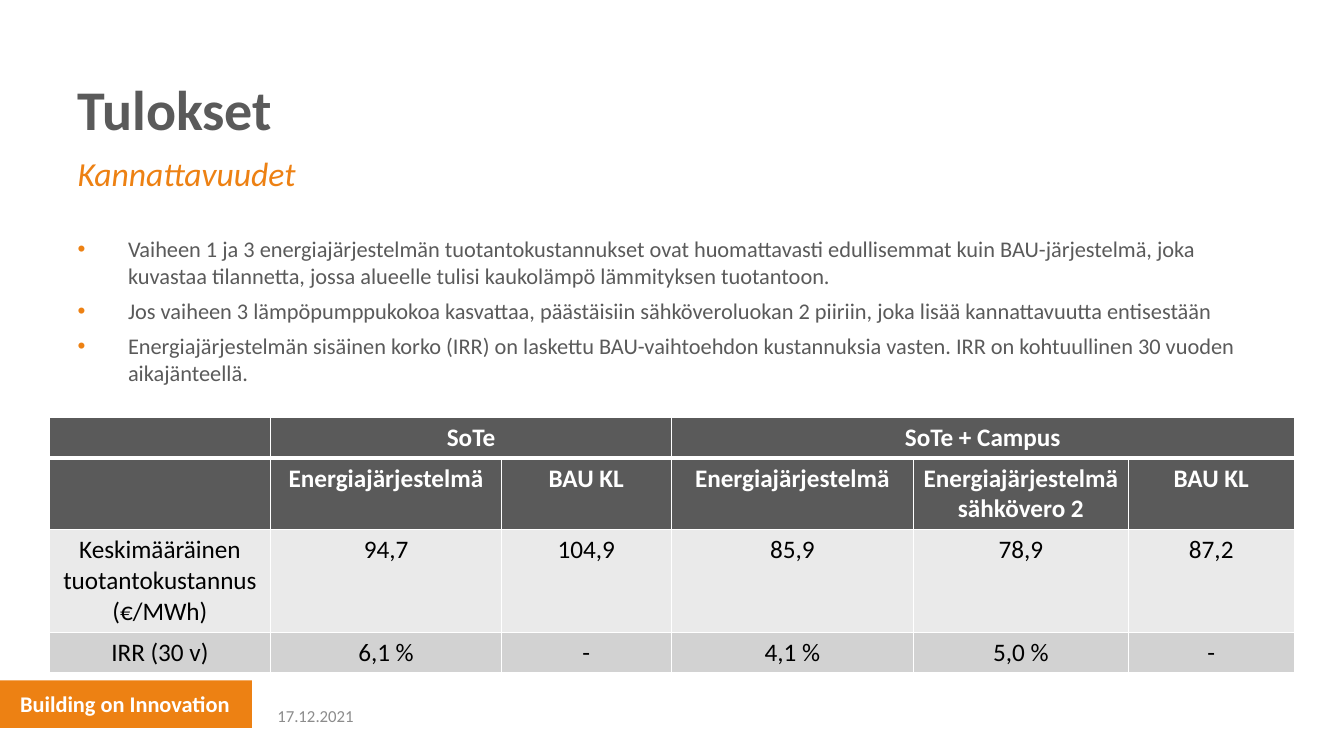
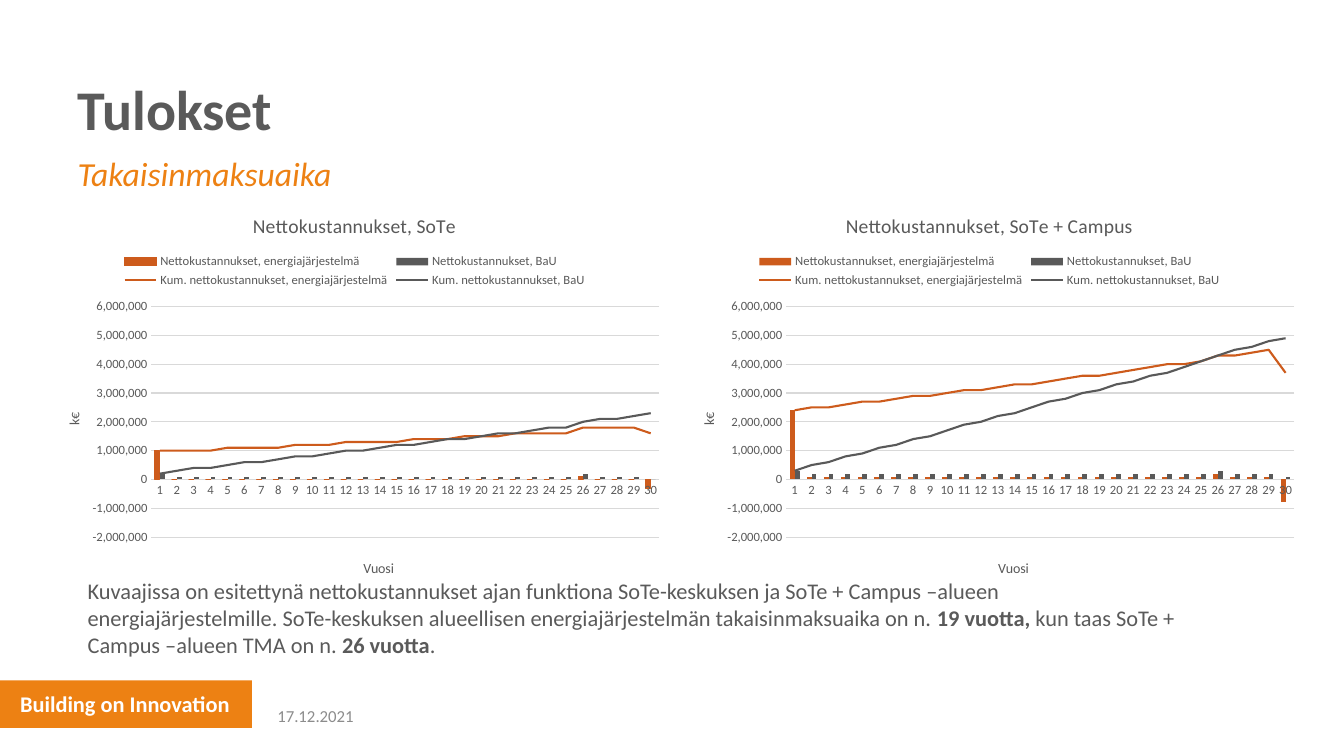
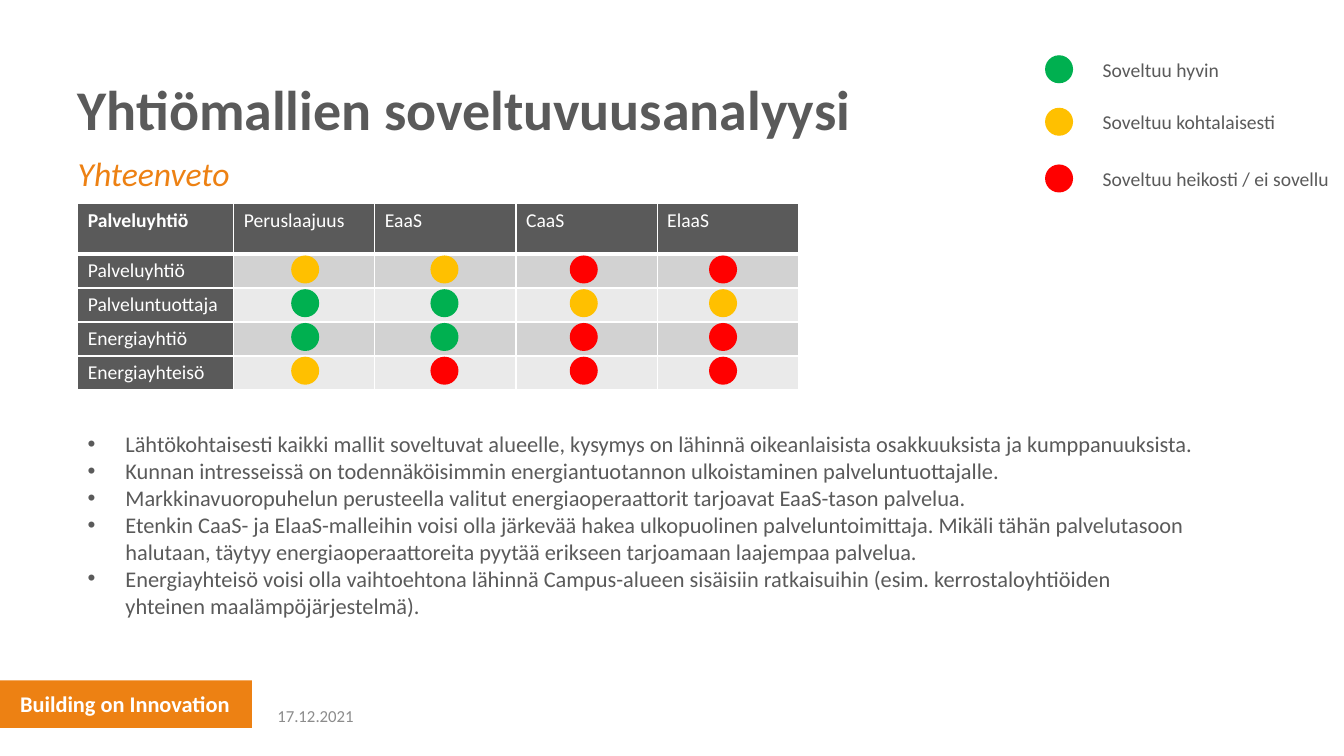
import pptx
import pptx.chart.data
import pptx.dml.color
import pptx.enum.chart
import pptx.enum.shapes
import pptx.enum.text
import pptx.oxml
import pptx.oxml.ns
import pptx.util
from lxml import etree

Pt = pptx.util.Pt
qn = pptx.oxml.ns.qn
RGB = pptx.dml.color.RGBColor
ALIGN = pptx.enum.text.PP_ALIGN
ANCHOR = pptx.enum.text.MSO_ANCHOR
SHAPE = pptx.enum.shapes.MSO_SHAPE
CHART = pptx.enum.chart

# Colours and text styles
ORANGE = RGB(0xED, 0x81, 0x13)
GRAY = RGB(0x5A, 0x5A, 0x5A)
MUTED = RGB(0x8C, 0x8C, 0x8C)
WHITE = RGB(0xFF, 0xFF, 0xFF)
BLACK = RGB(0, 0, 0)
LIGHT = RGB(0xEA, 0xEA, 0xEA)
DARK = RGB(0xD2, 0xD2, 0xD2)
GOOD = RGB(0, 0xB0, 0x50)
FAIR = RGB(0xFF, 0xC0, 0)
POOR = RGB(0xFF, 0, 0)
RUST = RGB(0xCD, 0x5B, 0x1C)
SLATE = RGB(0x59, 0x59, 0x59)
GRID = RGB(0xD9, 0xD9, 0xD9)

FONT = "Calibri"
HEAD = {"size": Pt(40), "bold": True, "color": GRAY}
SUB = {"size": Pt(24), "italic": True, "color": ORANGE}
BODY = {"size": Pt(16), "color": GRAY}
KEY = {"size": Pt(14), "color": GRAY}
BAND = {"size": Pt(16), "bold": True, "color": WHITE}
DATE = {"size": Pt(12), "color": MUTED}
TICK = {"size": Pt(9), "color": SLATE}
NAME = {"size": Pt(10), "bold": False, "color": SLATE}
TOP = {"size": Pt(14), "bold": False, "color": SLATE}

# Slide 1 content
POINTS = [
    "Vaiheen 1 ja 3 energiajärjestelmän tuotantokustannukset ovat huomattavasti edullisemmat kuin BAU-järjestelmä, joka kuvastaa tilannetta, jossa alueelle tulisi kaukolämpö lämmityksen tuotantoon.",
    "Jos vaiheen 3 lämpöpumppukokoa kasvattaa, päästäisiin sähköveroluokan 2 piiriin, joka lisää kannattavuutta entisestään",
    "Energiajärjestelmän sisäinen korko (IRR) on laskettu BAU-vaihtoehdon kustannuksia vasten. IRR on kohtuullinen 30 vuoden aikajänteellä.",
]
COSTS = [
    ["", "SoTe", "", "SoTe + Campus", "", ""],
    ["", "Energiajärjestelmä", "BAU KL", "Energiajärjestelmä",
     "Energiajärjestelmäsähkövero 2", "BAU KL"],
    ["Keskimääräinen tuotantokustannus\n(€/MWh)", "94,7", "104,9", "85,9", "78,9", "87,2"],
    ["IRR (30 v)", "6,1 %", "-", "4,1 %", "5,0 %", "-"],
]

# Slide 2 content, values in units of 100 000
UNIT = 100000
SERIES = ["Nettokustannukset, energiajärjestelmä", "Nettokustannukset, BaU",
          "Kum. nettokustannukset, energiajärjestelmä", "Kum. nettokustannukset, BaU"]
CHARTS = [
    ("Nettokustannukset, SoTe", True, [
        [10] + [0] * 24 + [1] + [0] * 3 + [-3],
        [2] + [1] * 24 + [2] + [1] * 3 + [0],
        [10, 10, 10, 10, 11, 11, 11, 11, 12, 12, 12, 13, 13, 13, 13,
         14, 14, 14, 15, 15, 15, 16, 16, 16, 16, 18, 18, 18, 18, 16],
        [2, 3, 4, 4, 5, 6, 6, 7, 8, 8, 9, 10, 10, 11, 12,
         12, 13, 14, 14, 15, 16, 16, 17, 18, 18, 20, 21, 21, 22, 23]]),
    ("Nettokustannukset, SoTe + Campus", False, [
        [24] + [1] * 24 + [2] + [1] * 3 + [-8],
        [3] + [2] * 24 + [3] + [2] * 3 + [1],
        [24, 25, 25, 26, 27, 27, 28, 29, 29, 30, 31, 31, 32, 33, 33,
         34, 35, 36, 36, 37, 38, 39, 40, 40, 41, 43, 43, 44, 45, 37],
        [3, 5, 6, 8, 9, 11, 12, 14, 15, 17, 19, 20, 22, 23, 25,
         27, 28, 30, 31, 33, 34, 36, 37, 39, 41, 43, 45, 46, 48, 49]]),
]
PAYBACK = [
    ("Kuvaajissa on esitettynä nettokustannukset ajan funktiona SoTe-keskuksen ja SoTe + Campus –alueen energiajärjestelmille. SoTe-keskuksen alueellisen energiajärjestelmän takaisinmaksuaika on n. ", False),
    ("19 vuotta, ", True),
    ("kun taas SoTe + Campus –alueen TMA on n. ", False),
    ("26 vuotta", True),
    (".", False),
]

# Slide 3 content
MODELS = [
    ["Palveluyhtiö", "Peruslaajuus", "EaaS", "CaaS", "ElaaS"],
    ["Palveluyhtiö", "", "", "", ""],
    ["Palveluntuottaja", "", "", "", ""],
    ["Energiayhtiö", "", "", "", ""],
    ["Energiayhteisö", "", "", "", ""],
]
RATINGS = [
    [FAIR, FAIR, POOR, POOR],
    [GOOD, GOOD, FAIR, FAIR],
    [GOOD, GOOD, POOR, POOR],
    [FAIR, POOR, POOR, POOR],
]
KEYS = [(GOOD, "Soveltuu hyvin", 37.5), (FAIR, "Soveltuu kohtalaisesti", 75),
        (POOR, "Soveltuu heikosti / ei sovellu", 115.5)]
NOTES = [
    "Lähtökohtaisesti kaikki mallit soveltuvat alueelle, kysymys on lähinnä oikeanlaisista osakkuuksista ja kumppanuuksista.",
    "Kunnan intresseissä on todennäköisimmin energiantuotannon ulkoistaminen palveluntuottajalle.",
    "Markkinavuoropuhelun perusteella valitut energiaoperaattorit tarjoavat EaaS-tason palvelua.",
    "Etenkin CaaS- ja ElaaS-malleihin voisi olla järkevää hakea ulkopuolinen palveluntoimittaja. Mikäli tähän palvelutasoon halutaan, täytyy energiaoperaattoreita pyytää erikseen tarjoamaan laajempaa palvelua.",
    "Energiayhteisö voisi olla vaihtoehtona lähinnä Campus-alueen sisäisiin ratkaisuihin (esim. kerrostaloyhtiöiden yhteinen maalämpöjärjestelmä).",
]


# Text
def style(font, fmt):
    font.name = FONT
    for key, val in fmt.items():
        if key == "color":
            font.color.rgb = val
        else:
            setattr(font, key, val)


def bullet(para, indent, color):
    props = para._p.get_or_add_pPr()
    props.set("marL", str(Pt(indent)))
    props.set("indent", str(-Pt(indent)))
    tint = etree.SubElement(props, qn("a:buClr"))
    etree.SubElement(tint, qn("a:srgbClr"), val=str(color))
    etree.SubElement(props, qn("a:buFont"), typeface="Arial")
    etree.SubElement(props, qn("a:buChar"), char="•")


def write(frame, paras, fmt, align=None, indent=0, mark=GRAY, gap=0):
    for num, runs in enumerate(paras):
        para = frame.add_paragraph() if num else frame.paragraphs[0]
        if align is not None:
            para.alignment = align
        if num and gap:
            para.space_before = Pt(gap)
        if indent:
            bullet(para, indent, mark)
        for text, bold in [(runs, None)] if isinstance(runs, str) else runs:
            run = para.add_run()
            run.text = text
            style(run.font, fmt if bold is None else {**fmt, "bold": bold})


def setup(frame, inset, anchor):
    vals = {"word_wrap": True, "auto_size": pptx.enum.text.MSO_AUTO_SIZE.NONE,
            "vertical_anchor": anchor}
    if not inset:
        sides = ("left", "top", "right", "bottom")
        vals.update({"margin_" + side: 0 for side in sides})
    for key, val in vals.items():
        setattr(frame, key, val)


def label(slide, box, paras, fmt, inset=True, anchor=ANCHOR.TOP, **opts):
    shape = slide.shapes.add_textbox(*map(Pt, box))
    setup(shape.text_frame, inset, anchor)
    write(shape.text_frame, paras, fmt, **opts)
    return shape


def solid(slide, kind, box, color):
    shape = slide.shapes.add_shape(kind, *map(Pt, box))
    shape.shadow.inherit = False
    shape.fill.solid()
    shape.fill.fore_color.rgb = color
    shape.line.fill.background()
    return shape


# Shared slide parts
def brand(slide):
    band = solid(slide, SHAPE.RECTANGLE, (0, 486, 180, 34), ORANGE)
    motto = label(slide, (14.4, 493, 163, 26), ["Building on Innovation"], BAND, inset=False)
    for shape in (band, motto):
        slide.slide_layout.shapes._spTree.append(shape._element)


def page(deck, title, sub):
    slide = deck.slides.add_slide(deck.slide_layouts[5])
    head = slide.shapes.title
    for key, val in zip(("left", "top", "width", "height"), (55.5, 42.5, 852.5, 59)):
        setattr(head, key, Pt(val))
    setup(head.text_frame, False, ANCHOR.BOTTOM)
    write(head.text_frame, [title], HEAD, align=ALIGN.LEFT)
    label(slide, (55.5, 109.5, 852.5, 40), [sub], SUB, inset=False)
    label(slide, (191, 500.5, 216, 22), ["17.12.2021"], DATE, anchor=ANCHOR.MIDDLE)
    return slide


# Tables
def edges(cell, row):
    props = cell._tc.get_or_add_tcPr()
    wide = {"T": 3 if row == 1 else 1, "B": 3 if row == 0 else 1}
    for num, side in enumerate("LRTB"):
        line = etree.Element(qn("a:ln" + side), w=str(Pt(wide.get(side, 1))))
        fill = etree.SubElement(line, qn("a:solidFill"))
        etree.SubElement(fill, qn("a:srgbClr"), val=str(WHITE))
        props.insert(num, line)


def table(slide, left, top, cols, rows, data, look, align, spans=()):
    box = map(Pt, (left, top, sum(cols), sum(rows)))
    grid = slide.shapes.add_table(len(rows), len(cols), *box).table
    for parts, key, sizes in ((grid.columns, "width", cols), (grid.rows, "height", rows)):
        for part, val in zip(parts, sizes):
            setattr(part, key, Pt(val))
    for row, first, last in spans:
        grid.cell(row, first).merge(grid.cell(row, last))
    for row, texts in enumerate(data):
        for col, text in enumerate(texts):
            cell = grid.cell(row, col)
            fill, fmt = look(row, col)
            edges(cell, row)
            cell.fill.solid()
            cell.fill.fore_color.rgb = fill
            if text:
                write(cell.text_frame, text.split("\n"), fmt, align=align)
            else:
                etree.SubElement(cell.text_frame.paragraphs[0]._p, qn("a:endParaRPr"),
                                 sz=str(int(fmt["size"].pt * 100)))


def costlook(row, col):
    head = row < 2
    fill = GRAY if head else (LIGHT, DARK)[row % 2]
    return fill, {"size": Pt(18), "bold": head, "color": WHITE if head else BLACK}


def modellook(row, col):
    head = row == 0 or col == 0
    fill = GRAY if head else (LIGHT, DARK)[row % 2]
    return fill, {"size": Pt(14), "bold": row == col == 0, "color": WHITE}


# Charts
def place(part, index, **vals):
    for old in part.findall(qn("c:layout")):
        part.remove(old)
    layout = etree.Element(qn("c:layout"))
    manual = etree.SubElement(layout, qn("c:manualLayout"))
    for key, val in vals.items():
        etree.SubElement(manual, qn("c:" + key), val=str(val))
    part.insert(index, layout)


def addlines(chart):
    bars = chart.plots[0]._element
    lines = etree.Element(qn("c:lineChart"))
    etree.SubElement(lines, qn("c:grouping"), val="standard")
    etree.SubElement(lines, qn("c:varyColors"), val="0")
    for ser in bars.findall(qn("c:ser"))[2:]:
        for flag in ser.findall(qn("c:invertIfNegative")):
            ser.remove(flag)
        lines.append(ser)
    etree.SubElement(lines, qn("c:marker"), val="1")
    for axis in bars.findall(qn("c:axId")):
        etree.SubElement(lines, qn("c:axId"), val=axis.get("val"))
    bars.addnext(lines)


def combo(slide, box, title, edged, rows):
    data = pptx.chart.data.CategoryChartData(number_format="#,##0")
    data.categories = [str(year) for year in range(1, 31)]
    for name, vals in zip(SERIES, rows):
        data.add_series(name, [val * UNIT for val in vals])
    chart = slide.shapes.add_chart(
        CHART.XL_CHART_TYPE.COLUMN_CLUSTERED, *map(Pt, box), data).chart
    style(chart.font, {"size": Pt(10), "color": BLACK})
    addlines(chart)

    # Series
    bars, lines = chart.plots
    bars.gap_width = 150
    bars.vary_by_categories = False
    for bar, line, color in zip(bars.series, lines.series, (RUST, SLATE)):
        bar.invert_if_negative = False
        bar.format.fill.solid()
        bar.format.fill.fore_color.rgb = color
        if edged and color == RUST:
            bar.format.line.color.rgb = color
            bar.format.line.width = Pt(0.75)
        line.smooth = False
        line.marker.style = CHART.XL_MARKER_STYLE.NONE
        line.format.line.color.rgb = color
        line.format.line.width = Pt(1.5)

    # Titles and legend
    chart.has_title = True
    write(chart.chart_title.text_frame, [title], TOP)
    chart.has_legend = True
    legend = chart.legend
    legend.position = CHART.XL_LEGEND_POSITION.TOP
    legend.include_in_layout = False
    style(legend.font, TICK)
    place(legend._element, 1, xMode="edge", yMode="edge", x=0.13, y=0.14, w=0.74, h=0.1)

    # Axes
    years, money = chart.category_axis, chart.value_axis
    for axis, name, x, y in ((years, "Vuosi", 0.51, 0.91), (money, "k€", 0.04, 0.54)):
        axis.major_tick_mark = axis.minor_tick_mark = CHART.XL_TICK_MARK.NONE
        style(axis.tick_labels.font, TICK)
        frame = axis.axis_title.text_frame
        write(frame, [name], NAME)
        if axis is money:
            frame._txBody.bodyPr.set("rot", "-5400000")
            frame._txBody.bodyPr.set("vert", "horz")
        place(axis.axis_title._element, 1, xMode="edge", yMode="edge", x=x, y=y)
    money.minimum_scale, money.maximum_scale = -20 * UNIT, 60 * UNIT
    money.major_unit = 10 * UNIT
    money.tick_labels.number_format = "#,##0"
    money.tick_labels.number_format_is_linked = False
    money.format.line.fill.background()
    for part in (years, money.major_gridlines):
        part.format.line.color.rgb = GRID
        part.format.line.width = Pt(0.75)
    place(chart._chartSpace.chart.plotArea, 0, layoutTarget="inner", xMode="edge",
          yMode="edge", x=0.18, y=0.28, w=0.8, h=0.58)


# Slides
def profit(deck):
    slide = page(deck, "Tulokset", "Kannattavuudet")
    brand(slide)
    label(slide, (55.5, 168, 853, 124.5), POINTS, BODY, inset=False,
          indent=36, mark=ORANGE, gap=6)
    table(slide, 35, 298, (158.5, 164.5, 121.5, 173, 153.5, 118.5), (22, 39, 59, 22),
          COSTS, costlook, ALIGN.CENTER, spans=((0, 1, 2), (0, 3, 5)))


def payback(deck):
    slide = page(deck, "Tulokset", "Takaisinmaksuaika")
    wide = 453.5
    for num, (title, edged, rows) in enumerate(CHARTS):
        combo(slide, (26.5 + num * wide, 139.5, wide, 284), title, edged, rows)
    label(slide, (55.5, 409, 793, 65.5), [PAYBACK], BODY)


def models(deck):
    slide = page(deck, "Yhtiömallien soveltuvuusanalyysi", "Yhteenveto")
    table(slide, 55.5, 145.5, (111.5,) + (100.8,) * 4, (36,) + (24,) * 4,
          MODELS, modellook, ALIGN.LEFT)
    dot = 20
    for row, colors in enumerate(RATINGS):
        for col, color in enumerate(colors):
            spot = (208 + col * 99.5, 182.5 + row * 24.1, dot, dot)
            solid(slide, SHAPE.OVAL, spot, color)
    for color, text, top in KEYS:
        solid(slide, SHAPE.OVAL, (746.5, top + 2, dot, dot), color)
        label(slide, (780.5, top, 179.5, 24.5), [text], KEY)
    label(slide, (55.5, 304, 804, 163), NOTES, BODY, indent=27)


def main():
    deck = pptx.Presentation()
    deck.slide_width, deck.slide_height = Pt(960), Pt(540)
    for build in (profit, payback, models):
        build(deck)
    deck.save("out.pptx")


if __name__ == "__main__":
    main()
